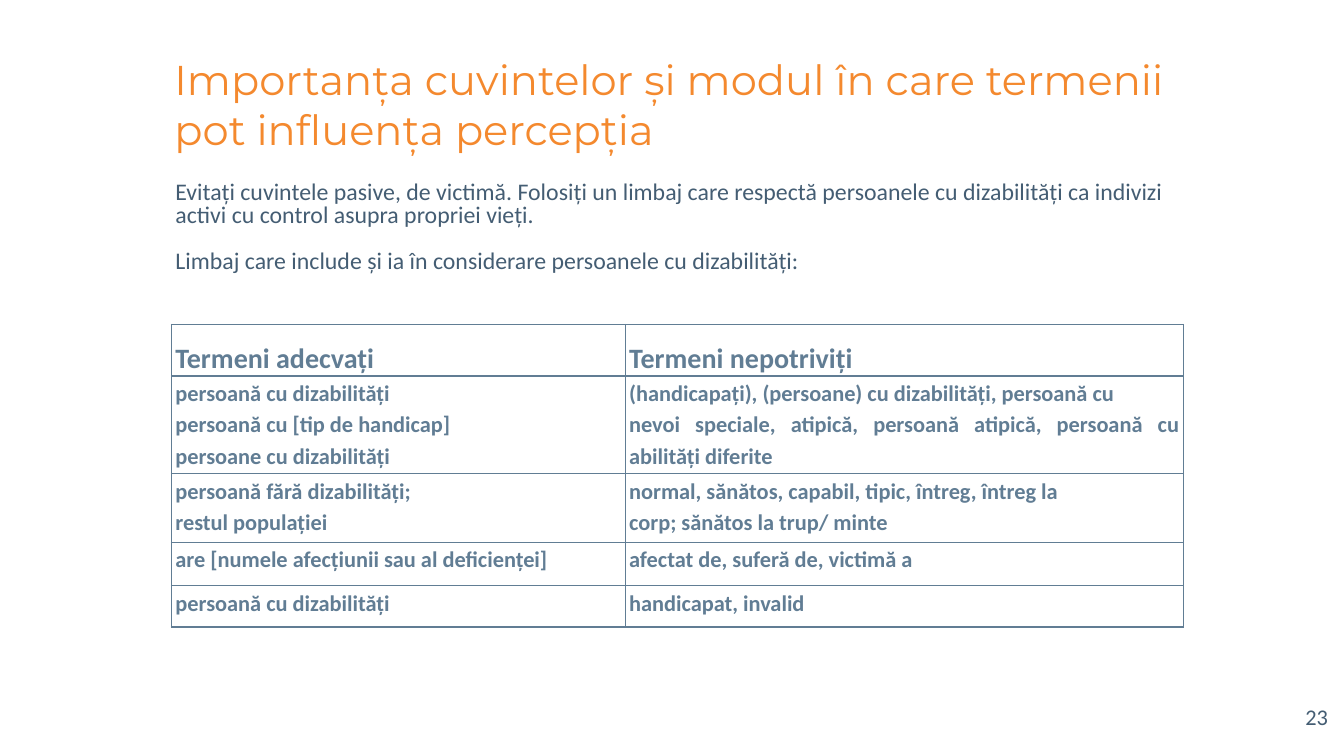
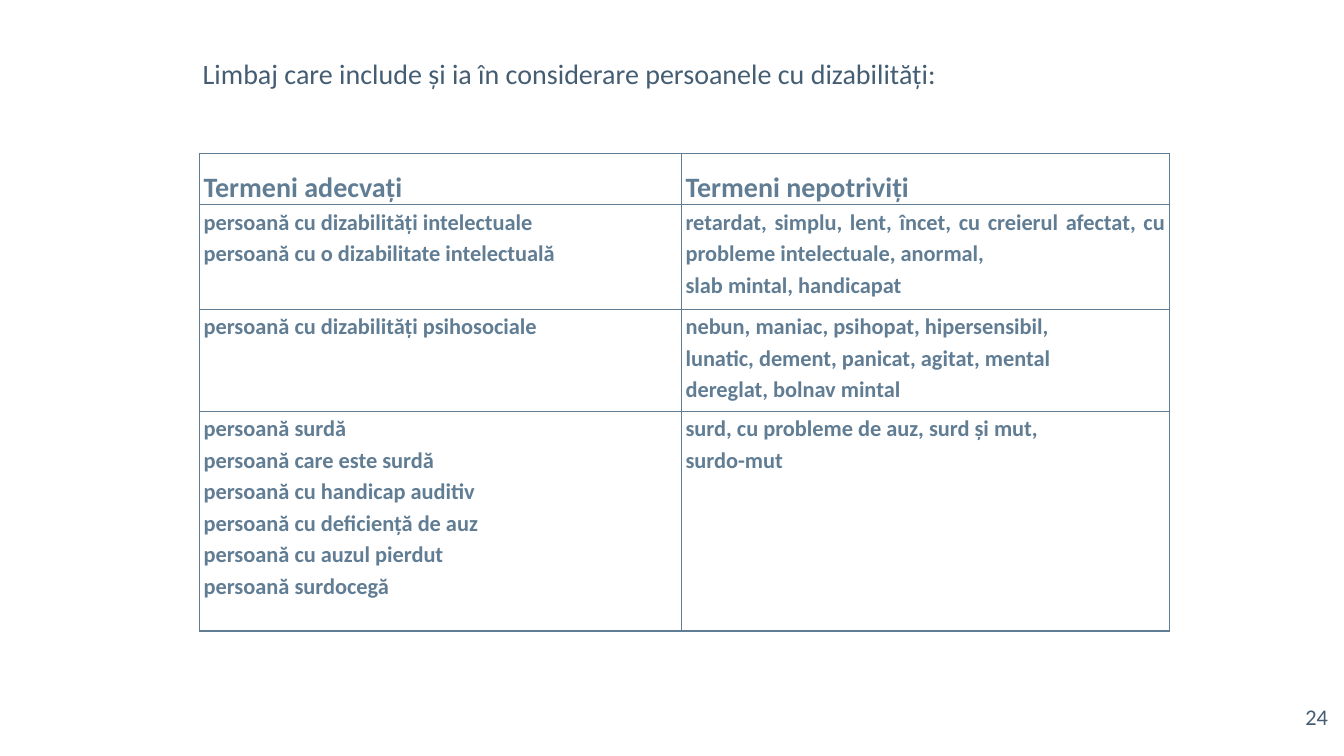
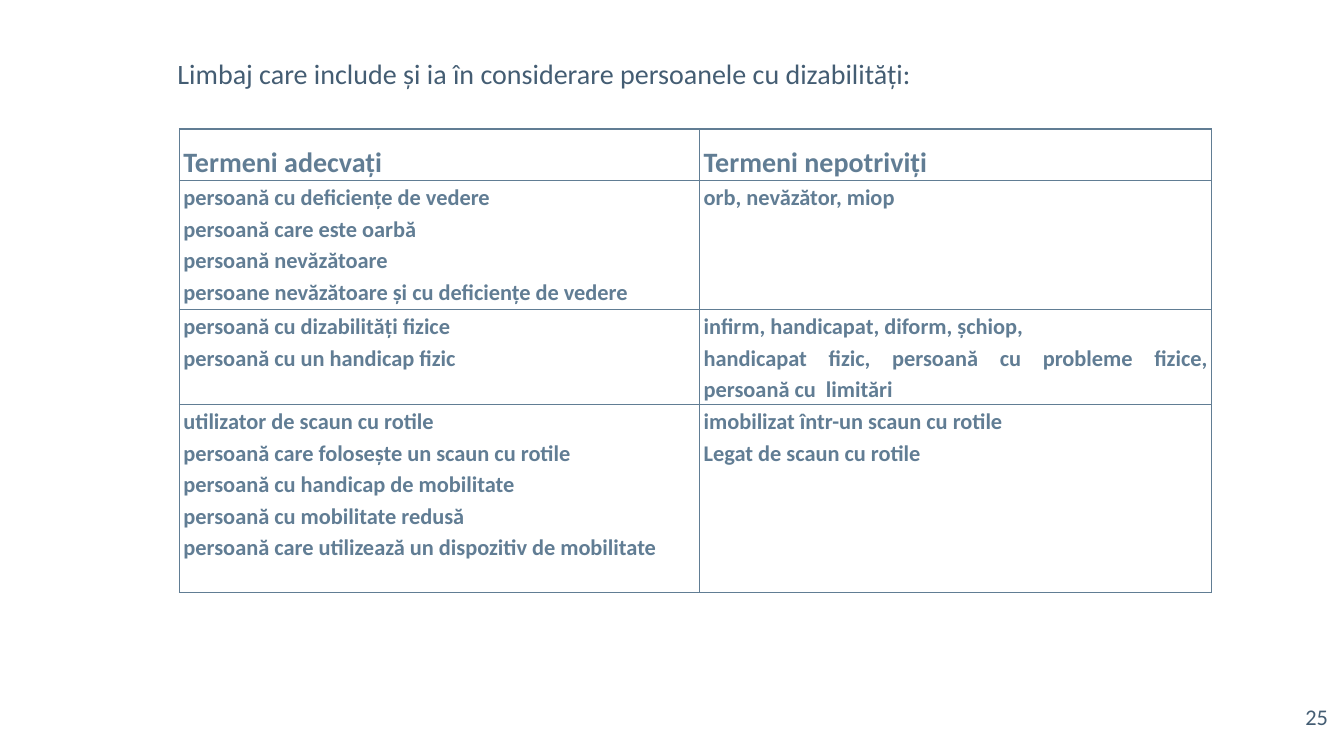
from pptx import Presentation
from pptx.dml.color import RGBColor
from pptx.enum.text import MSO_ANCHOR, MSO_AUTO_SIZE, PP_ALIGN
from pptx.oxml.ns import qn
from pptx.util import Inches, Pt
from lxml import etree

TOP = MSO_ANCHOR.TOP
FIXED = MSO_AUTO_SIZE.NONE
LEFT, RIGHT, FULL = PP_ALIGN.LEFT, PP_ALIGN.RIGHT, PP_ALIGN.JUSTIFY

ORANGE, NAVY, STEEL = "F4892E", "445D73", "617D94"
SANS, HEAD = "Calibri", "Montserrat"
LEAD = "Limbaj care include și ia în considerare persoanele cu dizabilități:"
HEADS = (["Termeni adecvați"], ["Termeni nepotriviți"])

BASIC = [
    (["persoană cu dizabilități", "persoană cu [tip de handicap]",
      "persoane cu dizabilități"],
     ["(handicapați), (persoane) cu dizabilități, persoană cu",
      "nevoi speciale, atipică, persoană atipică, persoană cu abilități diferite"]),
    (["persoană fără dizabilități;", "restul populației"],
     ["normal, sănătos, capabil, tipic, întreg, întreg la",
      "corp; sănătos la trup/ minte"]),
    (["are [numele afecțiunii sau al deficienței]"],
     ["afectat de, suferă de, victimă a"]),
    (["persoană cu dizabilități"], ["handicapat, invalid"]),
]
MIND = [
    (["persoană cu dizabilități intelectuale",
      "persoană cu o dizabilitate intelectuală"],
     ["retardat, simplu, lent, încet, cu creierul afectat, cu probleme intelectuale, anormal,",
      "slab mintal, handicapat"]),
    (["persoană cu dizabilități psihosociale"],
     ["nebun, maniac, psihopat, hipersensibil,",
      "lunatic, dement, panicat, agitat, mental",
      "dereglat, bolnav mintal"]),
    (["persoană surdă", "persoană care este surdă",
      "persoană cu handicap auditiv", "persoană cu deficiență de auz",
      "persoană cu auzul pierdut", "persoană surdocegă"],
     ["surd, cu probleme de auz, surd și mut,", "surdo-mut"]),
]
BODY = [
    (["persoană cu deficiențe de vedere", "persoană care este oarbă",
      "persoană nevăzătoare",
      "persoane nevăzătoare și cu deficiențe de vedere"],
     ["orb, nevăzător, miop"]),
    (["persoană cu dizabilități fizice", "persoană cu un handicap fizic"],
     ["infirm, handicapat, diform, șchiop,",
      "handicapat fizic, persoană cu probleme fizice, persoană cu  limitări"]),
    (["utilizator de scaun cu rotile",
      "persoană care folosește un scaun cu rotile",
      "persoană cu handicap de mobilitate", "persoană cu mobilitate redusă",
      "persoană care utilizează un dispozitiv de mobilitate"],
     ["imobilizat într-un scaun cu rotile", "Legat de scaun cu rotile"]),
]


def tint(code):
    """Turn a hex string into a colour."""
    return RGBColor.from_string(code)


def put(frame, lines, size=16, font=SANS, color=NAVY, bold=False,
        align=LEFT, pitch=1.0, gap=0):
    """Write one paragraph per line in a text frame."""
    for i, line in enumerate(lines):
        para = frame.add_paragraph() if i else frame.paragraphs[0]
        para.alignment, para.line_spacing = align, pitch
        para.space_before, para.space_after = Pt(gap if i else 0), Pt(0)
        run = para.add_run()
        run.text = line
        run.font.size, run.font.name, run.font.bold = Pt(size), font, bold
        run.font.color.rgb = tint(color)


def fit(shape, box, pad=(0.03, 0.03)):
    """Place a text shape in a box and return its frame."""
    shape.left, shape.top, shape.width, shape.height = map(Inches, box)
    frame = shape.text_frame
    frame.word_wrap, frame.auto_size = True, FIXED
    frame.vertical_anchor = TOP
    frame.margin_left = frame.margin_right = Inches(pad[0])
    frame.margin_top = frame.margin_bottom = Inches(pad[1])
    return frame


def title(slide, box, text):
    """Fill the title, or remove it when there is no text."""
    shape = slide.shapes.title
    if text:
        put(fit(shape, box), [text], size=29.7, font=HEAD, color=ORANGE)
    else:
        shape.element.getparent().remove(shape.element)


def intro(slide, box, lines, **form):
    """Fill the body placeholder with unbulleted lines."""
    frame = fit(slide.placeholders[1], box)
    put(frame, lines, **form)
    for para in frame.paragraphs:
        props = para._p.get_or_add_pPr()
        props.set("marL", "0")
        props.set("indent", "0")
        etree.SubElement(props, qn("a:buNone"))


def edge(cell):
    """Draw the four borders of a cell."""
    props = cell._tc.get_or_add_tcPr()
    for side in ("lnL", "lnR", "lnT", "lnB"):
        line = etree.SubElement(props, qn("a:" + side), w=str(Pt(1)))
        fill = etree.SubElement(line, qn("a:solidFill"))
        etree.SubElement(fill, qn("a:srgbClr"), val=STEEL)


def terms(slide, left, top, cols, rows, pairs):
    """Draw the table of suitable and unsuitable terms."""
    box = map(Inches, (left, top, sum(cols), sum(rows)))
    table = slide.shapes.add_table(len(rows), len(cols), *box).table
    table.first_row = table.horz_banding = False
    for col, width in zip(table.columns, cols):
        col.width = Inches(width)
    for i, (row, pair) in enumerate(zip(table.rows, [HEADS] + pairs)):
        row.height = Inches(rows[i])
        form = {"size": 16, "pitch": 1.15} if i else {"size": 20, "pitch": 1.5}
        for cell, lines in zip(row.cells, pair):
            edge(cell)
            cell.fill.background()
            cell.margin_left = cell.margin_right = Inches(0.04)
            cell.margin_top = cell.margin_bottom = 0
            put(cell.text_frame, lines, color=STEEL, bold=True,
                align=FULL, **form)


def page(slide, num):
    """Write the page number in the lower right corner."""
    box = (12.47, 6.93, 0.8, 0.57)
    shape = slide.shapes.add_textbox(*map(Inches, box))
    put(fit(shape, box, pad=(0.1, 0.05)), [str(num)], align=RIGHT)


def sheet(deck, num, lead, grid, head=None, **form):
    """Build a slide from a title, an introduction and a table."""
    slide = deck.slides.add_slide(deck.slide_layouts[1])
    title(slide, (1.7, 0.51, 10.67, 1.06), head)
    intro(slide, *lead, **form)
    terms(slide, *grid)
    page(slide, num)


def main():
    """Build and save the slides."""
    deck = Presentation()
    deck.slide_width, deck.slide_height = Inches(13.33), Inches(7.5)
    note = ("Evitați cuvintele pasive, de victimă. Folosiți un limbaj care "
            "respectă persoanele cu dizabilități ca indivizi activi cu "
            "control asupra propriei vieți.")
    sheet(deck, 23, ((1.71, 1.78, 10.02, 1), [note, LEAD]),
          (1.7, 3.22, (4.5, 5.54), (0.51, 0.97, 0.68, 0.43, 0.41), BASIC),
          head="Importanța cuvintelor și modul în care termenii "
               "pot influența percepția",
          size=17, pitch=0.8, gap=16.6)
    sheet(deck, 24, ((1.98, 0.53, 10.87, 0.41), [LEAD]),
          (1.98, 1.52, (4.78, 4.84), (0.51, 1.04, 1.01, 2.18), MIND), size=20)
    sheet(deck, 25, ((1.73, 0.53, 10.87, 0.41), [LEAD]),
          (1.78, 1.28, (5.16, 5.08), (0.51, 1.28, 0.94, 1.87), BODY), size=20)
    deck.save("out.pptx")


if __name__ == "__main__":
    main()
